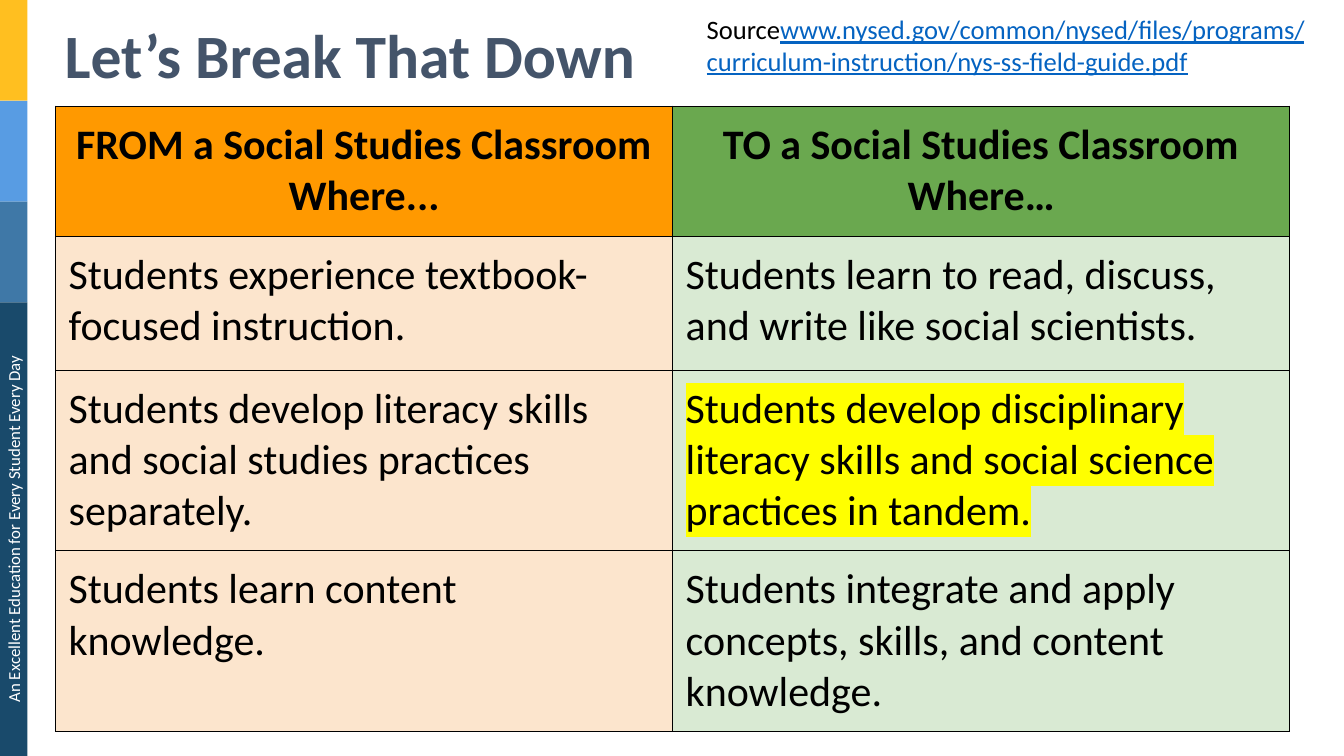
from lxml.etree import SubElement
from pptx import Presentation
from pptx.dml.color import RGBColor
from pptx.enum.shapes import MSO_SHAPE
from pptx.enum.text import MSO_ANCHOR, PP_ALIGN
from pptx.oxml import parse_xml
from pptx.oxml.ns import nsdecls, qn
from pptx.util import Cm, Pt

FONT = "Calibri"
BLACK = RGBColor(0x00, 0x00, 0x00)
WHITE = RGBColor(0xFF, 0xFF, 0xFF)
SLATE = RGBColor(0x44, 0x54, 0x6A)
LINK = RGBColor(0x05, 0x63, 0xC1)
YELLOW = RGBColor(0xFF, 0xFF, 0x00)
GOLD = RGBColor(0xFF, 0xBF, 0x20)
SKY = RGBColor(0x58, 0x9C, 0xE3)
STEEL = RGBColor(0x3F, 0x78, 0xA7)
NAVY = RGBColor(0x19, 0x4A, 0x6B)
ORANGE = RGBColor(0xFF, 0x99, 0x00)
GREEN = RGBColor(0x6A, 0xA8, 0x4F)
PEACH = RGBColor(0xFC, 0xE5, 0xCD)
MINT = RGBColor(0xD9, 0xEA, 0xD3)

UNIT = 2.54
PAD = 0.33
BANDS = [(GOLD, 1), (SKY, 1), (STEEL, 1), (NAVY, 4.5)]
HEIGHTS = [3.28, 3.38, 4.55, 4.55]
ROWS = [
    ("FROM a Social Studies Classroom Where...",
     "TO a Social Studies Classroom Where…"),
    ("Students experience textbook-focused instruction.",
     "Students learn to read, discuss, and write like social scientists."),
    ("Students develop literacy skills and social studies practices separately.",
     "Students develop disciplinary literacy skills and social science practices in tandem."),
    ("Students learn content knowledge.",
     "Students integrate and apply concepts, skills, and content knowledge."),
]
MARKED = (2, 1)


def add_text(para, text, size, color=BLACK, bold=False, line=False,
             mark=None, align=PP_ALIGN.LEFT):
    para.alignment = align
    run = para.add_run()
    run.text = text
    font = run.font
    font.size = Pt(size)
    font.bold = bold
    font.underline = line
    font.color.rgb = color
    font.name = FONT
    if mark is not None:
        glow = parse_xml(f'<a:highlight {nsdecls("a")}><a:srgbClr val="{mark}"/></a:highlight>')
        run._r.get_or_add_rPr().find(qn("a:latin")).addprevious(glow)


def add_box(slide, left, top, width, height, pad=0.0, anchor=MSO_ANCHOR.TOP):
    box = slide.shapes.add_textbox(Cm(left), Cm(top), Cm(width), Cm(height))
    frame = box.text_frame
    frame.word_wrap = True
    frame.vertical_anchor = anchor
    frame.margin_left = frame.margin_right = Cm(pad)
    frame.margin_top = frame.margin_bottom = Cm(pad)
    return box


def add_bands(slide):
    top = 0
    for color, units in BANDS:
        band = slide.shapes.add_shape(
            MSO_SHAPE.RECTANGLE, 0, Cm(top), Cm(0.69), Cm(units * UNIT))
        band.shadow.inherit = False
        band.fill.solid()
        band.fill.fore_color.rgb = color
        band.line.fill.background()
        top += units * UNIT


def add_edges(cell):
    props = cell._tc.get_or_add_tcPr()
    for side in ("lnL", "lnR", "lnT", "lnB"):
        edge = SubElement(props, qn(f"a:{side}"), w=str(Pt(0.75)))
        fill = SubElement(edge, qn("a:solidFill"))
        SubElement(fill, qn("a:srgbClr"), val=str(BLACK))


def add_cell(cell, text, color, **style):
    cell.margin_left = cell.margin_right = Cm(PAD)
    cell.margin_top = cell.margin_bottom = Cm(PAD)
    add_edges(cell)
    cell.fill.solid()
    cell.fill.fore_color.rgb = color
    add_text(cell.text_frame.paragraphs[0], text, 30, **style)


def add_grid(slide):
    grid = slide.shapes.add_table(
        len(ROWS), 2, Cm(1.4), Cm(2.67), Cm(31.1), Cm(sum(HEIGHTS))).table
    for row, (texts, height) in enumerate(zip(ROWS, HEIGHTS)):
        grid.rows[row].height = Cm(height)
        head = row == 0
        fills = (ORANGE, GREEN) if head else (PEACH, MINT)
        for col, (text, color) in enumerate(zip(texts, fills)):
            add_cell(grid.cell(row, col), text, color, bold=head,
                     align=PP_ALIGN.CENTER if head else PP_ALIGN.LEFT,
                     mark=YELLOW if (row, col) == MARKED else None)


def main():
    deck = Presentation()
    deck.slide_width, deck.slide_height = Cm(33.87), Cm(19.05)
    slide = deck.slides.add_slide(deck.slide_layouts[6])

    add_bands(slide)
    motto = add_box(slide, -5.38, 12.95, 11.43, 0.76, pad=0.13)
    motto.rotation = 270
    add_text(motto.text_frame.paragraphs[0],
             "An Excellent Education for Every Student Every Day",
             12, color=WHITE, align=PP_ALIGN.CENTER)

    title = add_box(slide, 1.63, 0, 16.61, 2.31, anchor=MSO_ANCHOR.BOTTOM)
    para = title.text_frame.paragraphs[0]
    para.line_spacing = 0.9
    add_text(para, "Let’s Break That Down", 44, color=SLATE, bold=True)

    add_grid(slide)

    source = add_box(slide, 17.48, 0, 16.03, 2.31, pad=PAD)
    para = source.text_frame.paragraphs[0]
    add_text(para, "Source", 19)
    add_text(para, "www.nysed.gov/common/nysed/files/programs/"
             "curriculum-instruction/nys-ss-field-guide.pdf",
             19, color=LINK, line=True)

    deck.save("out.pptx")


if __name__ == "__main__":
    main()
